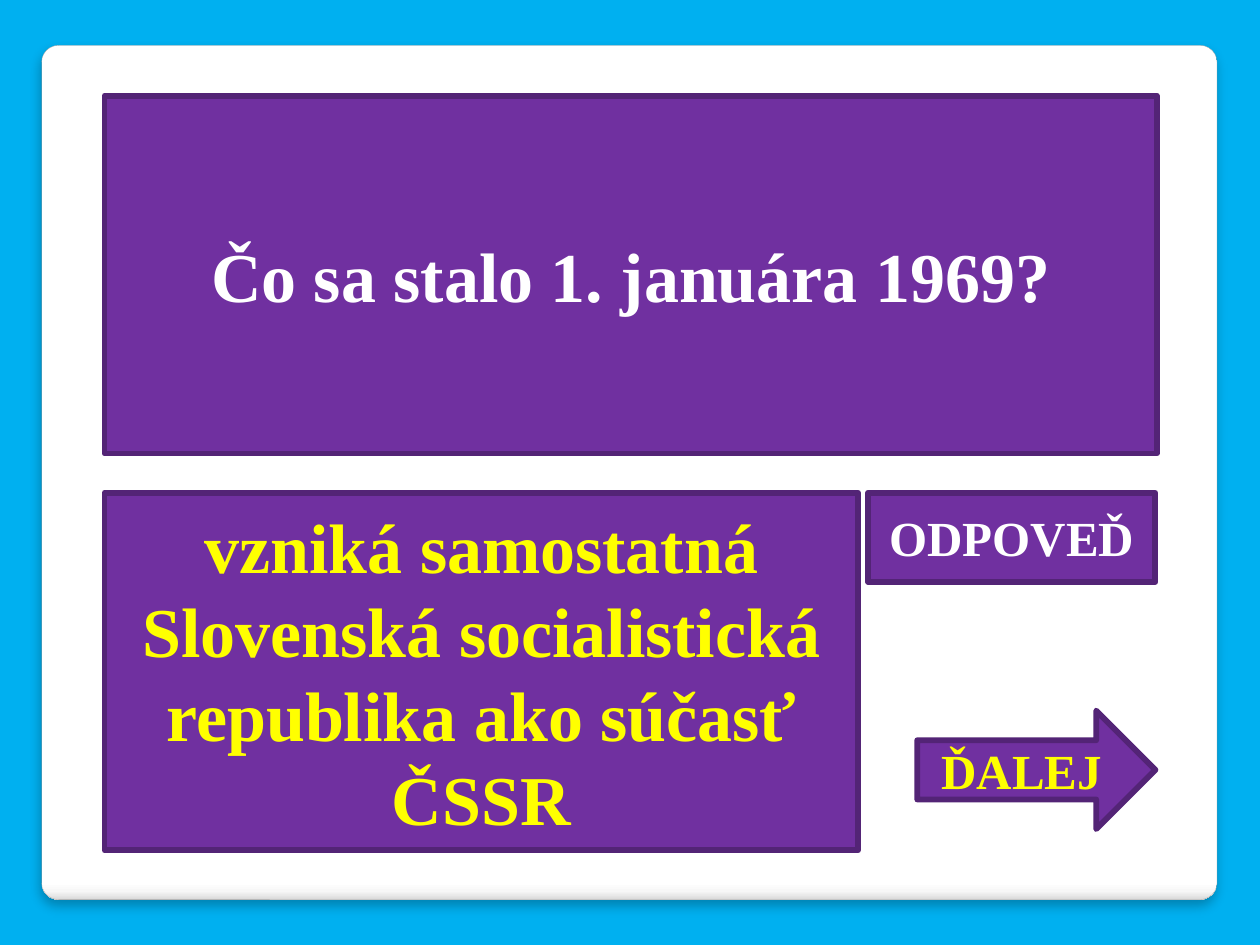
from dataclasses import dataclass

from lxml import etree
from pptx import Presentation
from pptx.dml.color import RGBColor
from pptx.enum import shapes, text
from pptx.oxml import ns
from pptx.util import Inches, Pt

FONT = "Times New Roman"
PURPLE, DARK_PURPLE = "7030A0", "532476"
WHITE, YELLOW = "FFFFFF", "FFFF00"
LEFT, RIGHT = 0.83, 9.17
RECT = shapes.MSO_SHAPE.RECTANGLE
ARROW = shapes.MSO_SHAPE.RIGHT_ARROW


@dataclass
class Box:
    label: str
    left: float
    top: float
    width: float
    height: float
    size: int
    color: str
    kind: shapes.MSO_SHAPE = RECT


def paint(target, color: str) -> None:
    """Give a fill a solid colour."""
    target.solid()
    target.fore_color.rgb = RGBColor.from_string(color)


def add_outlined(slide, kind, left: float, top: float, width: float,
                 height: float, line: str, weight: float):
    sp = slide.shapes.add_shape(kind, Inches(left), Inches(top),
                                Inches(width), Inches(height))
    sp.shadow.inherit = False
    paint(sp.line.fill, line)
    sp.line.width = Pt(weight)
    return sp


def add_color(parent, color: str):
    return etree.SubElement(parent, ns.qn("a:srgbClr"), val=color)


def add_panel(slide) -> None:
    """Rounded white card with a shaded lower edge and a soft shadow."""
    sp = add_outlined(slide, shapes.MSO_SHAPE.ROUNDED_RECTANGLE,
                      0.33, 0.36, 9.33, 6.78, "A4A4A4", 0.16)
    sp.adjustments[0] = 0.02
    sp.fill.gradient()
    sp.fill.gradient_angle = 270
    stops = sp.element.spPr.find(".//" + ns.qn("a:gsLst"))
    for old in list(stops):
        stops.remove(old)
    for percent, color in ((0, WHITE), (98, WHITE), (99, "F7F7F7"), (100, "DADADA")):
        stop = etree.SubElement(stops, ns.qn("a:gs"), pos=str(percent * 1000))
        add_color(stop, color)
    effects = sp.element.spPr.find(ns.qn("a:effectLst"))
    shadow = etree.SubElement(effects, ns.qn("a:outerShdw"), blurRad=str(Pt(6)),
                              dist=str(Pt(4)), dir="5400000", algn="t", rotWithShape="0")
    etree.SubElement(add_color(shadow, "000000"), ns.qn("a:alpha"), val="25000")


def add_box(slide, box: Box) -> None:
    sp = add_outlined(slide, box.kind, box.left, box.top, box.width,
                      box.height, DARK_PURPLE, 3.35)
    paint(sp.fill, PURPLE)
    tf = sp.text_frame
    tf.word_wrap = True
    tf.vertical_anchor = text.MSO_ANCHOR.MIDDLE
    p = tf.paragraphs[0]
    p.alignment = text.PP_ALIGN.CENTER
    r = p.add_run()
    r.text = box.label
    r.font.name, r.font.size, r.font.bold = FONT, Pt(box.size), True
    paint(r.font.fill, box.color)


def main() -> None:
    prs = Presentation()
    prs.slide_width, prs.slide_height = Inches(10), Inches(7.5)
    s = prs.slides.add_slide(prs.slide_layouts[6])

    # Background and card
    paint(s.background.fill, "00B0F0")
    add_panel(s)

    # Question, answer and the two buttons
    boxes = [
        Box("Čo sa stalo 1. januára 1969?", LEFT, 0.76, 8.35, 2.84, 40, WHITE),
        Box("vzniká samostatná Slovenská socialistická republika ako súčasť ČSSR",
            LEFT, 3.91, 5.98, 2.84, 40, YELLOW),
        Box("ODPOVEĎ", RIGHT - 2.28, 3.91, 2.28, 0.71, 28, WHITE),
        Box("ĎALEJ", RIGHT - 1.89, 5.64, 1.89, 0.94, 28, YELLOW, ARROW),
    ]
    for box in boxes:
        add_box(s, box)

    prs.save("out.pptx")


if __name__ == "__main__":
    main()
